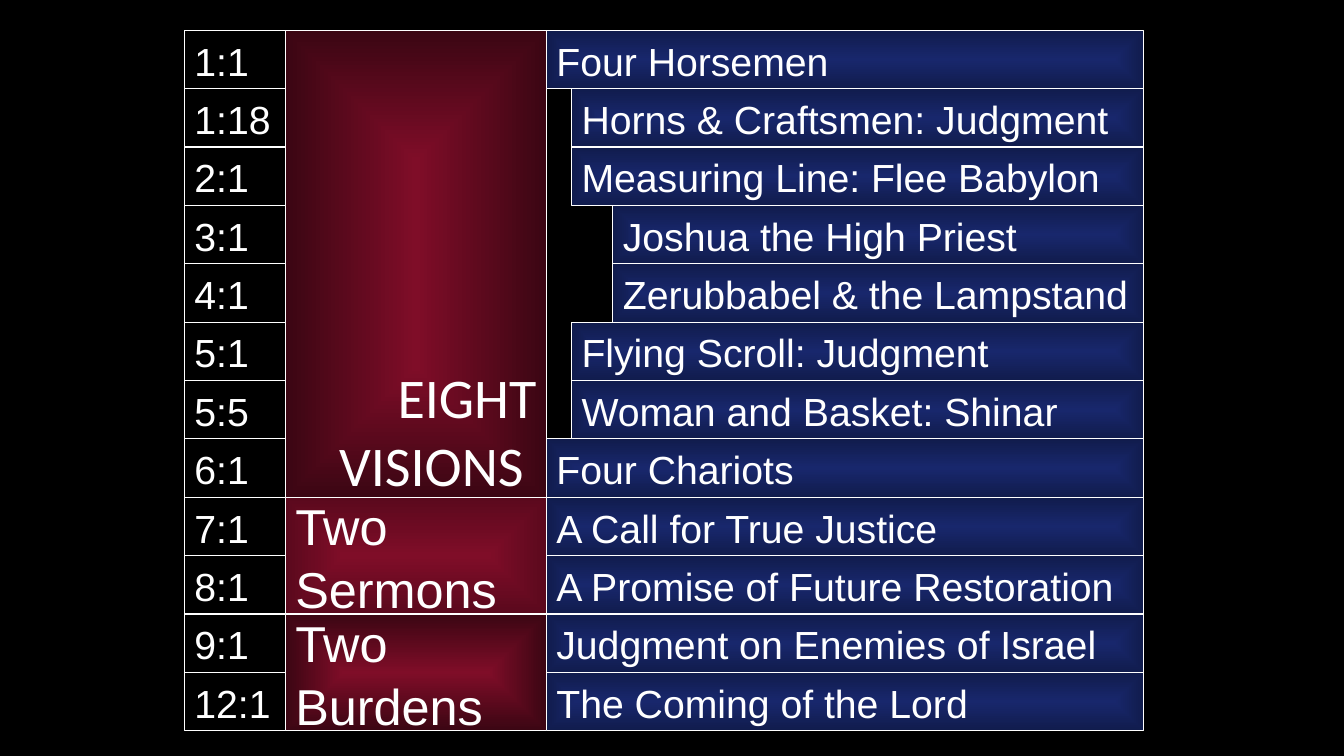
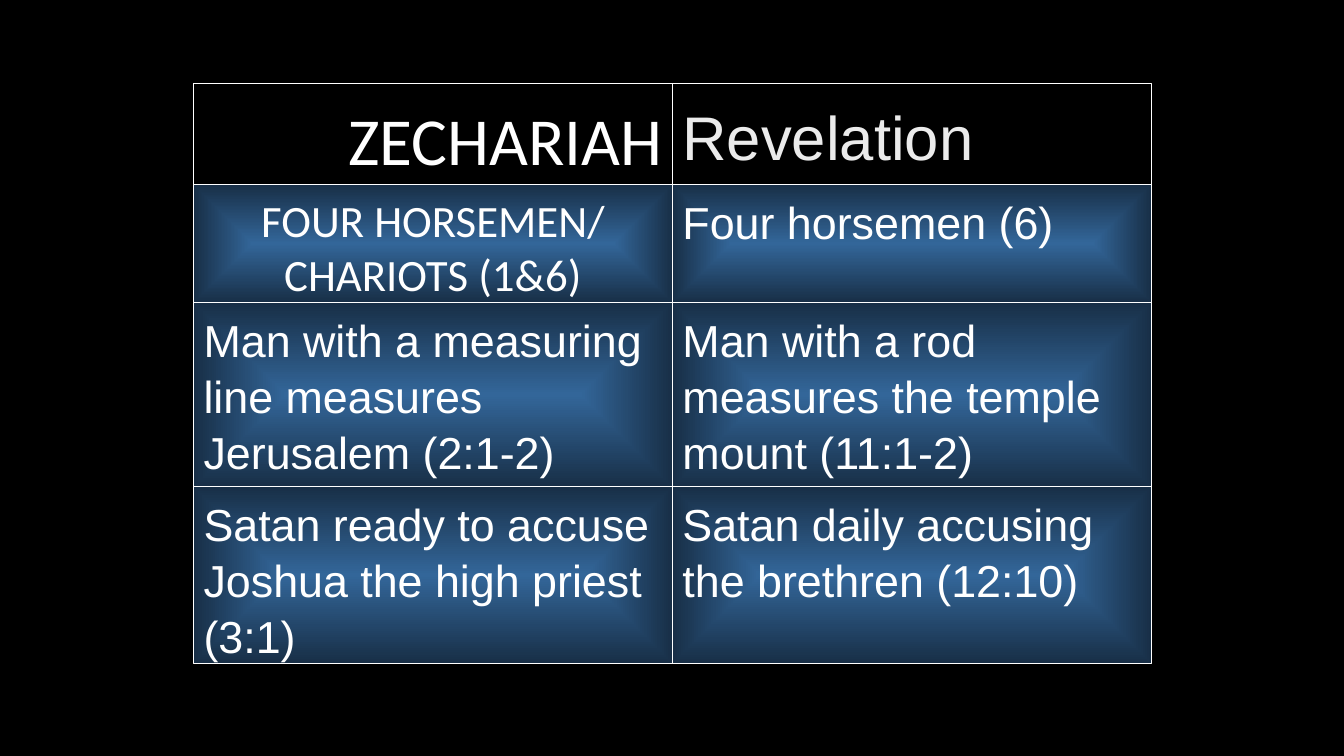
from pptx import Presentation
from pptx.dml.color import RGBColor
from pptx.enum.shapes import MSO_SHAPE as SHAPE
from pptx.enum.text import MSO_ANCHOR as ANCHOR, MSO_AUTO_SIZE as AUTO_SIZE, PP_ALIGN as ALIGN
from pptx.oxml import parse_xml
from pptx.oxml.ns import nsdecls, qn
from pptx.util import Inches, Pt

COLORS = {
    "black": "000000", "white": "FFFFFF", "soft white": "EBEBEB",
    "red": "7F0D28", "dark red": "3B0613", "mid red": "5B091D",
    "navy": "18276C", "dark navy": "111C4D",
    "blue": "336699", "dark blue": "182F47",
}
RED = ("red", "dark red")
SERMON_RED = ("red", "mid red")
NAVY = ("navy", "dark navy")
BLUE = ("blue", "dark blue")
TITLE_SLIDE, TITLE_ONLY = 0, 5

# Outline chart: verse, indent level, topic
OUTLINE = [
    ("1:1", 0, "Four Horsemen"),
    ("1:18", 1, "Horns & Craftsmen: Judgment"),
    ("2:1", 1, "Measuring Line: Flee Babylon"),
    ("3:1", 2, "Joshua the High Priest"),
    ("4:1", 2, "Zerubbabel & the Lampstand"),
    ("5:1", 1, "Flying Scroll: Judgment"),
    ("5:5", 1, "Woman and Basket: Shinar"),
    ("6:1", 0, "Four Chariots"),
    ("7:1", 0, "A Call for True Justice"),
    ("8:1", 0, "A Promise of Future Restoration"),
    ("9:1", 0, "Judgment on Enemies of Israel"),
    ("12:1", 0, "The Coming of the Lord"),
]
VERSE_LEFT, PART_LEFT, OUTLINE_RIGHT = 1.83, 2.83, 11.34
TOPIC_LEFTS = (5.42, 5.67, 6.08)
OUTLINE_TOP, OUTLINE_BOTTOM = 0.3, 7.25
ROW = (OUTLINE_BOTTOM - OUTLINE_TOP) / len(OUTLINE)

# Comparison chart: top, height, Zechariah text, Revelation text
COMPARISON = [
    (3, 1.83, "Man with a measuring line measures Jerusalem (2:1-2)",
     "Man with a rod measures the temple mount (11:1-2)"),
    (4.83, 1.75, "Satan ready to accuse Joshua the high priest (3:1)",
     "Satan daily accusing the brethren (12:10)"),
]
COLUMN_LEFT, COLUMN_WIDTH = 1.92, 4.75


def rgb(name):
    return RGBColor.from_string(COLORS[name])


def write(frame, text, size=28, font="Arial", color="white", align=ALIGN.LEFT,
          anchor=ANCHOR.MIDDLE, inset=0.05, spacing=1.04):
    """Fill a text frame; a line feed starts a paragraph, a vertical tab a line."""
    frame.text = text
    frame.word_wrap = True
    frame.auto_size = AUTO_SIZE.NONE
    frame.vertical_anchor = anchor
    frame.margin_left = frame.margin_right = Inches(0.1)
    frame.margin_top = frame.margin_bottom = Inches(inset)
    for para in frame.paragraphs:
        para.alignment = align
        para.line_spacing = spacing
        para.space_before = Pt(0)
        for span in para.runs:
            span.font.size = Pt(size)
            span.font.name = font
            span.font.color.rgb = rgb(color)


class Deck:
    def __init__(self):
        self.deck = Presentation()
        self.deck.slide_width = Inches(13.33)
        self.deck.slide_height = Inches(7.5)
        backdrop = self.deck.slide_master.background.fill
        backdrop.solid()
        backdrop.fore_color.rgb = rgb("black")
        self.page = None

    def new_page(self, layout):
        self.page = self.deck.slides.add_slide(self.deck.slide_layouts[layout])

    def style(self, box, fill):
        """Fill with one colour name, or glow from a centre to an edge colour."""
        if isinstance(fill, str):
            box.fill.solid()
            box.fill.fore_color.rgb = rgb(fill)
        else:
            box.fill.gradient()
            for stop, name, position in zip(box.fill.gradient_stops, fill, (0, 1)):
                stop.color.rgb = rgb(name)
                stop.position = position
            gradient = box._element.spPr.find(qn("a:gradFill"))
            linear = gradient.find(qn("a:lin"))
            gradient.replace(linear, parse_xml(
                f'<a:path {nsdecls("a")} path="shape">'
                '<a:fillToRect l="50000" t="50000" r="50000" b="50000"/></a:path>'))
        box.line.color.rgb = rgb("white")
        box.line.width = Pt(0.75)

    def cell(self, left, top, width, height, text, fill, **format):
        box = self.page.shapes.add_shape(
            SHAPE.RECTANGLE, Inches(left), Inches(top), Inches(width), Inches(height))
        box.shadow.inherit = False
        self.style(box, fill)
        write(box.text_frame, text, **format)

    def placeholder(self, index, left, top, width, height, text, fill, **format):
        box = self.page.placeholders[index]
        box.left, box.top = Inches(left), Inches(top)
        box.width, box.height = Inches(width), Inches(height)
        self.style(box, fill)
        write(box.text_frame, text, font="Calibri", spacing=1.0, **format)


def outline_page(deck):
    deck.new_page(TITLE_ONLY)
    part_width = TOPIC_LEFTS[0] - PART_LEFT
    deck.placeholder(0, PART_LEFT, OUTLINE_TOP, part_width, 8 * ROW,
                     "EIGHT\vVISIONS ", RED, size=40, align=ALIGN.RIGHT,
                     anchor=ANCHOR.BOTTOM, inset=0)
    for first_row, text, fill in ((8, "Two\nSermons", SERMON_RED), (10, "Two Burdens", RED)):
        deck.cell(PART_LEFT, OUTLINE_TOP + first_row * ROW, part_width, 2 * ROW,
                  text, fill, size=36)
    for row, (verse, level, topic) in enumerate(OUTLINE):
        top, left = OUTLINE_TOP + row * ROW, TOPIC_LEFTS[level]
        deck.cell(VERSE_LEFT, top, PART_LEFT - VERSE_LEFT, ROW, verse, "black")
        deck.cell(left, top, OUTLINE_RIGHT - left, ROW, topic, NAVY)


def comparison_page(deck):
    deck.new_page(TITLE_SLIDE)
    right = COLUMN_LEFT + COLUMN_WIDTH
    body = {"size": 32, "anchor": ANCHOR.TOP, "inset": 0.08}
    deck.placeholder(0, COLUMN_LEFT, 0.83, COLUMN_WIDTH, 1, "ZECHARIAH", "black",
                     size=48, align=ALIGN.RIGHT, anchor=ANCHOR.BOTTOM)
    deck.placeholder(1, COLUMN_LEFT, 1.83, COLUMN_WIDTH, 1.17,
                     "FOUR HORSEMEN/ CHARIOTS (1&6)", BLUE, align=ALIGN.CENTER, **body)
    deck.cell(right, 0.83, COLUMN_WIDTH, 1, "Revelation", "black",
              size=44, color="soft white")
    deck.cell(right, 1.83, COLUMN_WIDTH, 1.17, "Four horsemen (6)", BLUE, **body)
    for top, height, *texts in COMPARISON:
        for left, text in zip((COLUMN_LEFT, right), texts):
            deck.cell(left, top, COLUMN_WIDTH, height, text, BLUE, **body)


def main():
    deck = Deck()
    outline_page(deck)
    comparison_page(deck)
    deck.deck.save("out.pptx")


if __name__ == "__main__":
    main()
